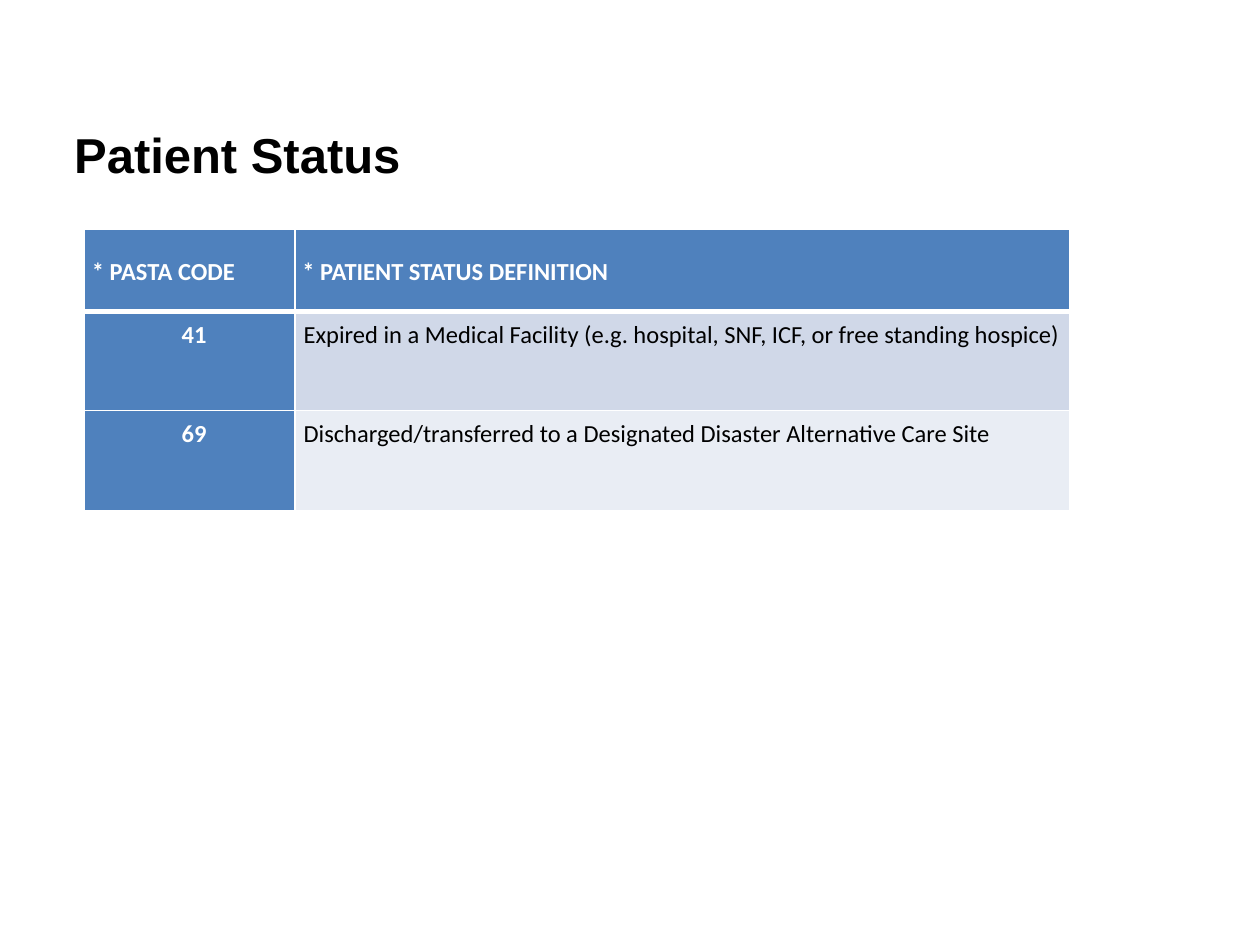
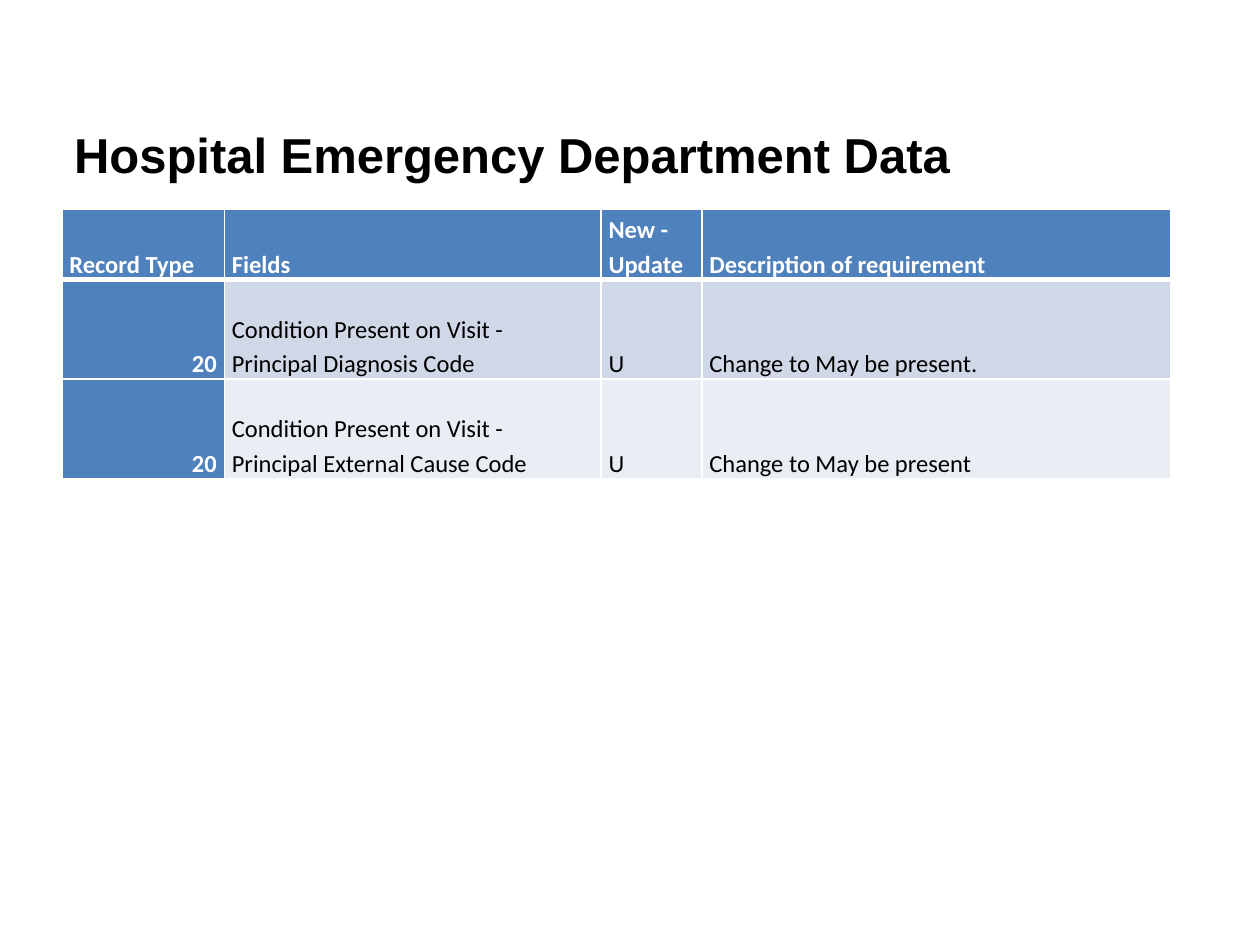
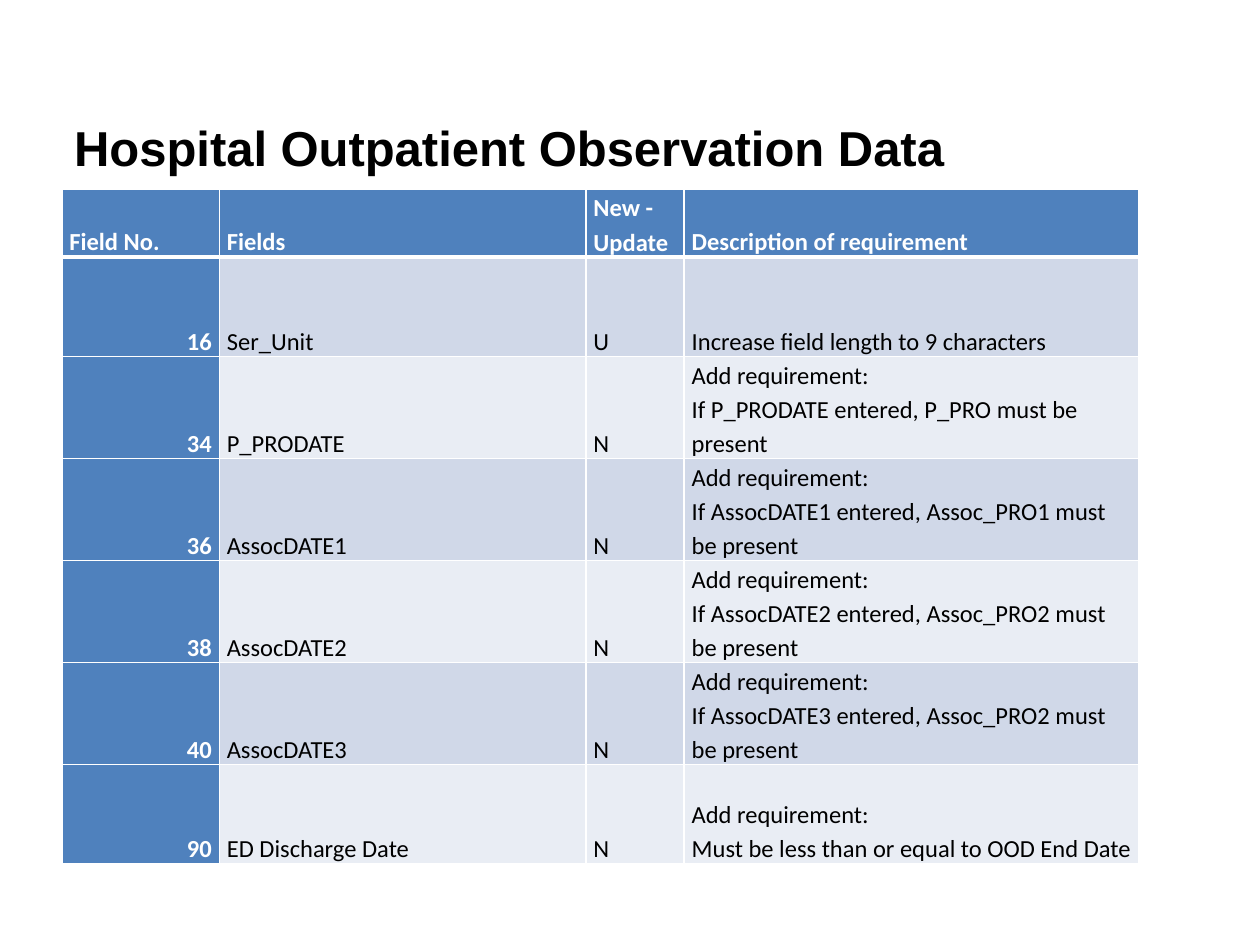
from pptx import Presentation
from pptx.dml.color import RGBColor
from pptx.enum.text import MSO_ANCHOR, PP_ALIGN
from pptx.oxml import parse_xml
from pptx.oxml.ns import nsdecls
from pptx.util import Inches, Pt

TOP, MIDDLE, BOTTOM = MSO_ANCHOR.TOP, MSO_ANCHOR.MIDDLE, MSO_ANCHOR.BOTTOM
LEFT, CENTER, RIGHT = PP_ALIGN.LEFT, PP_ALIGN.CENTER, PP_ALIGN.RIGHT

COLORS = {
    "title": "000000",
    "text": "000000",
    "header": "4F81BD",
    "header_text": "FFFFFF",
    "border": "FFFFFF",
    "odd_row": "D0D8E8",
    "even_row": "E9EDF4",
}
TITLE_FONT, TITLE_SIZE = "Arial", 28
TABLE_FONT, TABLE_SIZE = "Calibri", 14
THIN, THICK = 1, 3
MARGIN_LEFT, TITLE_WIDTH = 0.49, 8.79

# Cell styles: anchor, alignment, left and right inset, line spacing, space around
HEADER_MIDDLE = (MIDDLE, LEFT, 0.06, 0.06, 1.15, 0)
BOTTOM_LEFT = (BOTTOM, LEFT, 0.06, 0.06, 1.15, 0)
BOTTOM_RIGHT = (BOTTOM, RIGHT, 0.06, 0.06, 1.15, 0)
CODE = (TOP, CENTER, 0.14, 0.07, 1.3, 3)
DEFINITION = (TOP, LEFT, 0.07, 0.07, 1.3, 3)

STATUS_STYLES = {"header": HEADER_MIDDLE, "key": CODE, "body": DEFINITION}
FIELD_STYLES = {"header": BOTTOM_LEFT, "key": BOTTOM_RIGHT, "body": BOTTOM_LEFT}

STATUS_ROWS = [
    ("* PASTA CODE", "* PATIENT STATUS DEFINITION"),
    ("41", "Expired in a Medical Facility (e.g. hospital, SNF, ICF, or free standing hospice)"),
    ("69", "Discharged/transferred to a Designated Disaster Alternative Care Site"),
]
FIELD_HEADINGS = ("Fields", "New - Update", "Description of requirement")
EMERGENCY_ROWS = [
    ("Record Type", *FIELD_HEADINGS),
    ("20", "Condition Present on Visit - Principal Diagnosis Code", "U",
     "Change to May be present."),
    ("20", "Condition Present on Visit - Principal External Cause Code", "U",
     "Change to May be present"),
]
REQUIREMENT = "Add requirement:\n"
OBSERVATION_ROWS = [
    ("Field No.", *FIELD_HEADINGS),
    ("16", "Ser_Unit", "U", "Increase field length to 9 characters"),
    ("34", "P_PRODATE", "N", REQUIREMENT + "If P_PRODATE entered, P_PRO must be present"),
    ("36", "AssocDATE1", "N", REQUIREMENT + "If AssocDATE1 entered, Assoc_PRO1 must be present"),
    ("38", "AssocDATE2", "N", REQUIREMENT + "If AssocDATE2 entered, Assoc_PRO2 must be present"),
    ("40", "AssocDATE3", "N", REQUIREMENT + "If AssocDATE3 entered, Assoc_PRO2 must be present"),
    ("90", "ED Discharge Date", "N", REQUIREMENT + "Must be less than or equal to OOD End Date"),
]


def format_font(font, name, size, color, bold):
    font.name = name
    font.size = Pt(size)
    font.bold = bold
    font.color.rgb = RGBColor.from_string(COLORS[color])


def add_title(slide, text, top, height):
    box = slide.shapes.add_textbox(
        Inches(MARGIN_LEFT), Inches(top), Inches(TITLE_WIDTH), Inches(height))
    frame = box.text_frame
    frame.word_wrap = True
    frame.vertical_anchor = MIDDLE
    frame.text = text
    format_font(frame.paragraphs[0].runs[0].font, TITLE_FONT, TITLE_SIZE, "title", True)


def add_borders(cell, top, bottom):
    """Draw the four cell borders; call before setting the fill."""
    properties = cell._tc.get_or_add_tcPr()
    for side, width in (("L", THIN), ("R", THIN), ("T", top), ("B", bottom)):
        properties.append(parse_xml(
            f'<a:ln{side} {nsdecls("a")} w="{Pt(width)}"><a:solidFill>'
            f'<a:srgbClr val="{COLORS["border"]}"/></a:solidFill></a:ln{side}>'))


def fill_cell(cell, text, style, fill, color, bold):
    anchor, alignment, inset_left, inset_right, line_spacing, space = style
    cell.fill.solid()
    cell.fill.fore_color.rgb = RGBColor.from_string(COLORS[fill])
    cell.vertical_anchor = anchor
    cell.margin_left, cell.margin_right = Inches(inset_left), Inches(inset_right)
    cell.margin_top = cell.margin_bottom = 0
    cell.text_frame.text = text
    for paragraph in cell.text_frame.paragraphs:
        paragraph.alignment = alignment
        paragraph.line_spacing = line_spacing
        paragraph.space_before = paragraph.space_after = Pt(space)
        for run in paragraph.runs:
            format_font(run.font, TABLE_FONT, TABLE_SIZE, color, bold)


def add_data_table(slide, rows, left, top, widths, heights, styles):
    """Add a table with a header row, a key column and banded body rows."""
    table = slide.shapes.add_table(
        len(rows), len(widths), Inches(left), Inches(top),
        Inches(sum(widths)), Inches(sum(heights))).table
    for column, width in zip(table.columns, widths):
        column.width = Inches(width)
    for row, height in zip(table.rows, heights):
        row.height = Inches(height)
    for row_index, texts in enumerate(rows):
        band = "odd_row" if row_index % 2 else "even_row"
        for column_index, text in enumerate(texts):
            cell = table.cell(row_index, column_index)
            add_borders(cell, THICK if row_index == 1 else THIN,
                        THICK if row_index == 0 else THIN)
            if row_index == 0:
                fill_cell(cell, text, styles["header"], "header", "header_text", True)
            elif column_index == 0:
                fill_cell(cell, text, styles["key"], "header", "header_text", True)
            else:
                fill_cell(cell, text, styles["body"], band, "text", False)


def add_table_slide(presentation, title, title_box, rows, table_box, styles):
    slide = presentation.slides.add_slide(presentation.slide_layouts[6])
    add_title(slide, title, *title_box)
    add_data_table(slide, rows, *table_box, styles)


def main():
    presentation = Presentation()
    presentation.slide_width, presentation.slide_height = Inches(10), Inches(7.5)
    add_table_slide(
        presentation, "Patient Status", (0.84, 0.77), STATUS_ROWS,
        (0.67, 1.82, [1.67, 6.15], [0.65, 0.79, 0.79]), STATUS_STYLES)
    add_table_slide(
        presentation, "Hospital Emergency Department Data", (0.57, 1.3), EMERGENCY_ROWS,
        (MARGIN_LEFT, 1.66, [1.29, 2.99, 0.8, 3.72], [0.56, 0.79, 0.79]), FIELD_STYLES)
    add_table_slide(
        presentation, "Hospital Outpatient Observation Data", (0.74, 0.86), OBSERVATION_ROWS,
        (MARGIN_LEFT, 1.5, [1.25, 2.91, 0.78, 3.61], [0.54, 0.79, *[0.81] * 4, 0.79]),
        FIELD_STYLES)
    presentation.save("out.pptx")


if __name__ == "__main__":
    main()
